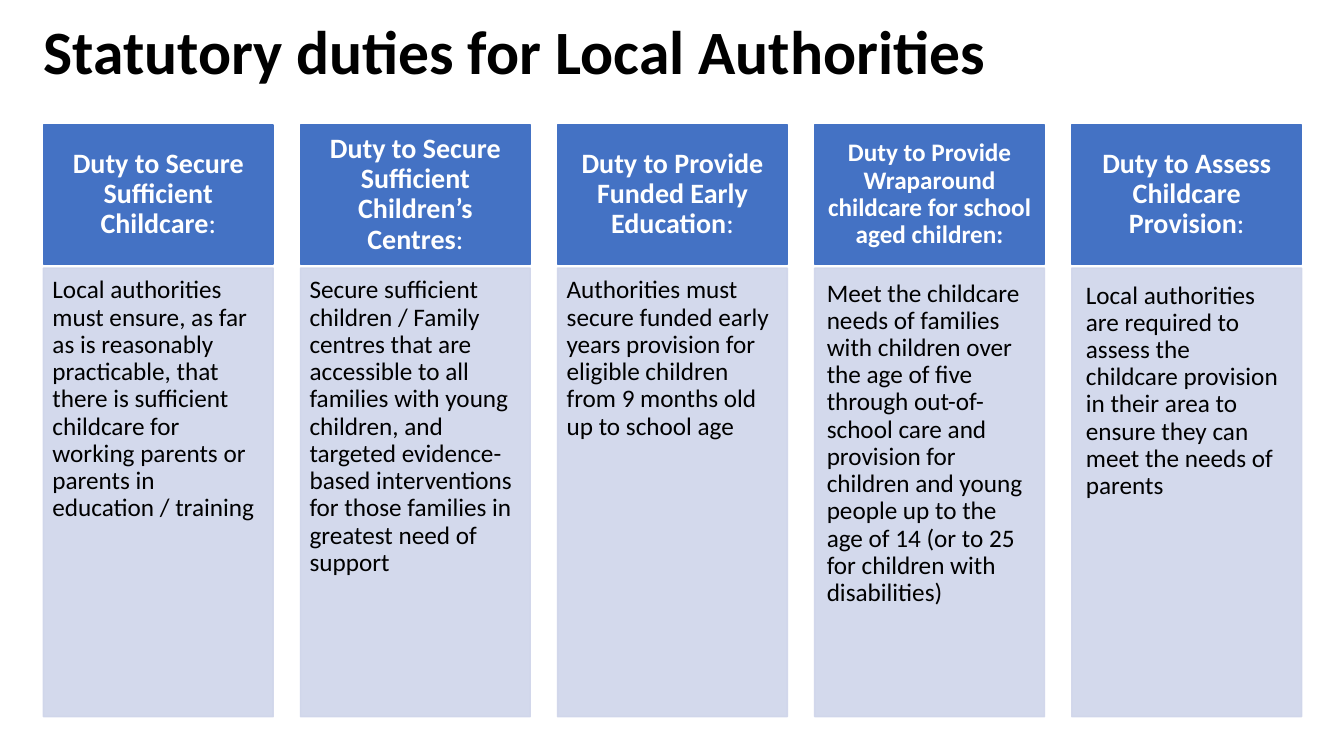
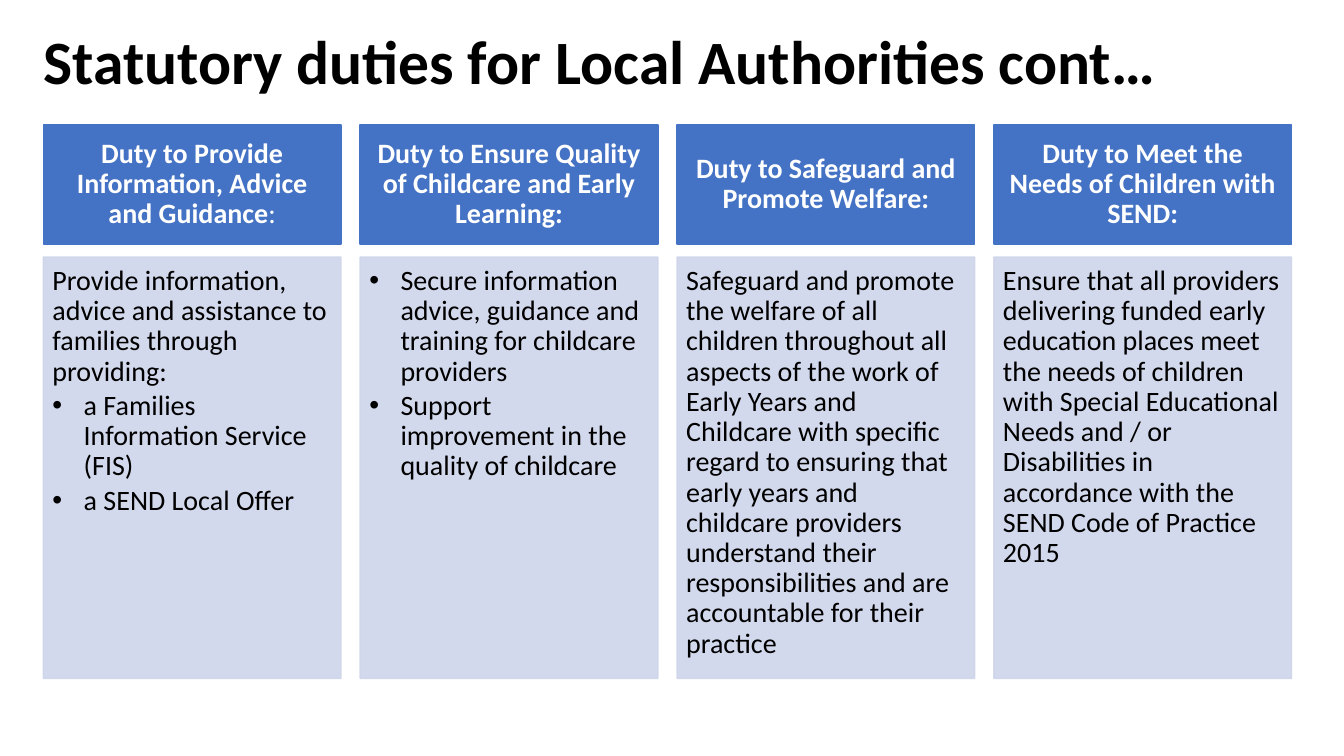
from dataclasses import dataclass

from lxml import etree
from pptx import Presentation
from pptx.dml.color import RGBColor
from pptx.enum.shapes import MSO_SHAPE
from pptx.enum.text import MSO_ANCHOR, PP_ALIGN
from pptx.oxml.ns import qn
from pptx.util import Inches, Pt

RECTANGLE = MSO_SHAPE.RECTANGLE
LEFT, CENTER = PP_ALIGN.LEFT, PP_ALIGN.CENTER
TOP, MIDDLE = MSO_ANCHOR.TOP, MSO_ANCHOR.MIDDLE


@dataclass(frozen=True)
class Theme:
    font: str = "Calibri"
    ink: RGBColor = RGBColor(0x00, 0x00, 0x00)
    paper: RGBColor = RGBColor(0xFF, 0xFF, 0xFF)
    header: RGBColor = RGBColor(0x44, 0x72, 0xC4)
    panel: RGBColor = RGBColor(0xCF, 0xD5, 0xEA)
    panel_opacity: int = 90
    title_size: int = 44
    large: int = 20
    small: int = 18
    line_spacing: float = 0.9
    bullet_indent: float = 0.31


THEME = Theme()
MARGIN = 0.43
HEADER_TOP = 1.24

# Insets: left, top, right, bottom
NO_INSETS = (0, 0, 0, 0)
HEADER_INSETS = (0.14, 0.08, 0.14, 0.08)
TIGHT_HEADER_INSETS = (0.12, 0.07, 0.12, 0.07)
PANEL_INSETS = (0.09, 0.09, 0.12, 0.14)
WIDE_INSETS = (0.12, 0.12, 0.16, 0.17)
WIDEST_INSETS = (0.14, 0.14, 0.19, 0.21)

# Each duty: bold heading, plain ending, heading size, heading insets,
# panel insets, panel paragraphs (a leading "•" makes a bullet)
PAGES = [
    {
        "title": "Statutory duties for Local Authorities",
        "title_top": 0.21, "span": 12.48, "gap": 0.27,
        "header_height": 1.38, "panel_top": 2.66, "panel_height": 4.45,
        "panel_size": THEME.small,
        "duties": [
            ("Duty to Secure Sufficient Childcare", ":", THEME.large,
             HEADER_INSETS, PANEL_INSETS,
             ["Local authorities must ensure, as far as is reasonably "
              "practicable, that there is sufficient childcare for working "
              "parents or parents in education / training"]),
            ("Duty to Secure Sufficient Children’s Centres", ":", THEME.large,
             HEADER_INSETS, PANEL_INSETS,
             ["Secure sufficient children / Family centres that are "
              "accessible to all families with young children, and targeted "
              "evidence-based interventions for those families in greatest "
              "need of support"]),
            ("Duty to Provide Funded Early Education", ":", THEME.large,
             HEADER_INSETS, PANEL_INSETS,
             ["Authorities must secure funded early years provision for "
              "eligible children from 9 months old up to school age"]),
            ("Duty to Provide Wraparound childcare for school aged children:",
             "", THEME.small, TIGHT_HEADER_INSETS, WIDE_INSETS,
             ["Meet the childcare needs of families with children over the "
              "age of five through out-of-school care and provision for "
              "children and young people up to the age of 14 (or to 25 for "
              "children with disabilities)"]),
            ("Duty to Assess Childcare Provision", ":", THEME.large,
             TIGHT_HEADER_INSETS, WIDEST_INSETS,
             ["Local authorities are required to assess the childcare "
              "provision in their area to ensure they can meet the needs of "
              "parents"]),
        ],
    },
    {
        "title": "Statutory duties for Local Authorities cont…",
        "title_top": 0.31, "span": 12.38, "gap": 0.19,
        "header_height": 1.18, "panel_top": 2.55, "panel_height": 4.18,
        "panel_size": THEME.large,
        "duties": [
            ("Duty to Provide Information, Advice and Guidance", ":",
             THEME.large, HEADER_INSETS, PANEL_INSETS,
             ["Provide information, advice and assistance to families "
              "through providing:",
              "•a Families Information Service (FIS)",
              "•a SEND Local Offer"]),
            ("Duty to Ensure Quality of Childcare and Early Learning:", "",
             THEME.large, HEADER_INSETS, PANEL_INSETS,
             ["•Secure information advice, guidance and training for "
              "childcare providers",
              "•Support improvement in the quality of childcare"]),
            ("Duty to Safeguard and Promote Welfare:", "", THEME.large,
             HEADER_INSETS, PANEL_INSETS,
             ["Safeguard and promote the welfare of all children throughout "
              "all aspects of the work of Early Years and Childcare with "
              "specific regard to ensuring that early years and childcare "
              "providers understand their responsibilities and are "
              "accountable for their practice"]),
            ("Duty to Meet the Needs of Children with SEND:", "", THEME.large,
             HEADER_INSETS, PANEL_INSETS,
             ["Ensure that all providers delivering funded early education "
              "places meet the needs of children with Special Educational "
              "Needs and / or Disabilities in accordance with the SEND Code "
              "of Practice 2015"]),
        ],
    },
]


def write(box, paragraphs, size, color, insets, bold=False, align=LEFT,
          anchor=TOP, ending=""):
    """Fill a box with paragraphs; the ending follows the last one unbolded."""
    frame = box.text_frame
    frame.word_wrap = True
    frame.vertical_anchor = anchor
    (frame.margin_left, frame.margin_top,
     frame.margin_right, frame.margin_bottom) = map(Inches, insets)
    for index, text in enumerate(paragraphs):
        para = frame.add_paragraph() if index else frame.paragraphs[0]
        para.alignment = align
        para.line_spacing = THEME.line_spacing
        if index < len(paragraphs) - 1:
            para.space_after = Pt(0.15 * size)
        if text.startswith("•"):
            properties = para._p.get_or_add_pPr()
            indent = Inches(THEME.bullet_indent)
            properties.set("marL", str(indent))
            properties.set("indent", str(-indent))
            etree.SubElement(properties, qn("a:buFont"), typeface="Arial")
            etree.SubElement(properties, qn("a:buChar"), char="•")
        para.font.name = THEME.font
        para.font.size = Pt(size)
        para.font.bold = bold
        para.font.color.rgb = color
        para.add_run().text = text.removeprefix("•")
    if ending:
        span = para.add_run()
        span.text = ending
        span.font.bold = False


def add_block(page, left, top, width, height, color, opacity=100):
    block = page.shapes.add_shape(RECTANGLE, *map(Inches, (left, top, width, height)))
    block.shadow.inherit = False
    block.line.width = Pt(1)
    for fill in (block.fill, block.line.fill):
        fill.solid()
        fill.fore_color.rgb = color
    if opacity < 100:
        for tint in block._element.spPr.iter(qn("a:srgbClr")):
            etree.SubElement(tint, qn("a:alpha"), val=str(opacity * 1000))
    return block


deck = Presentation()
deck.slide_width, deck.slide_height = Inches(13.33), Inches(7.5)
blank = deck.slide_layouts[6]

for content in PAGES:
    page = deck.slides.add_slide(blank)
    title = page.shapes.add_textbox(
        Inches(MARGIN), Inches(content["title_top"]), Inches(12.8), Inches(1.16))
    write(title, [content["title"]], THEME.title_size, THEME.ink, NO_INSETS, bold=True)

    duties = content["duties"]
    pitch = (content["span"] + content["gap"]) / len(duties)
    width = pitch - content["gap"]
    for column, duty in enumerate(duties):
        heading, ending, size, header_insets, panel_insets, paragraphs = duty
        left = MARGIN + column * pitch
        header = add_block(page, left, HEADER_TOP, width,
                           content["header_height"], THEME.header)
        write(header, [heading], size, THEME.paper, header_insets, bold=True,
              align=CENTER, anchor=MIDDLE, ending=ending)
        panel = add_block(page, left, content["panel_top"], width,
                          content["panel_height"], THEME.panel, THEME.panel_opacity)
        write(panel, paragraphs, content["panel_size"], THEME.ink, panel_insets)

deck.save("out.pptx")
